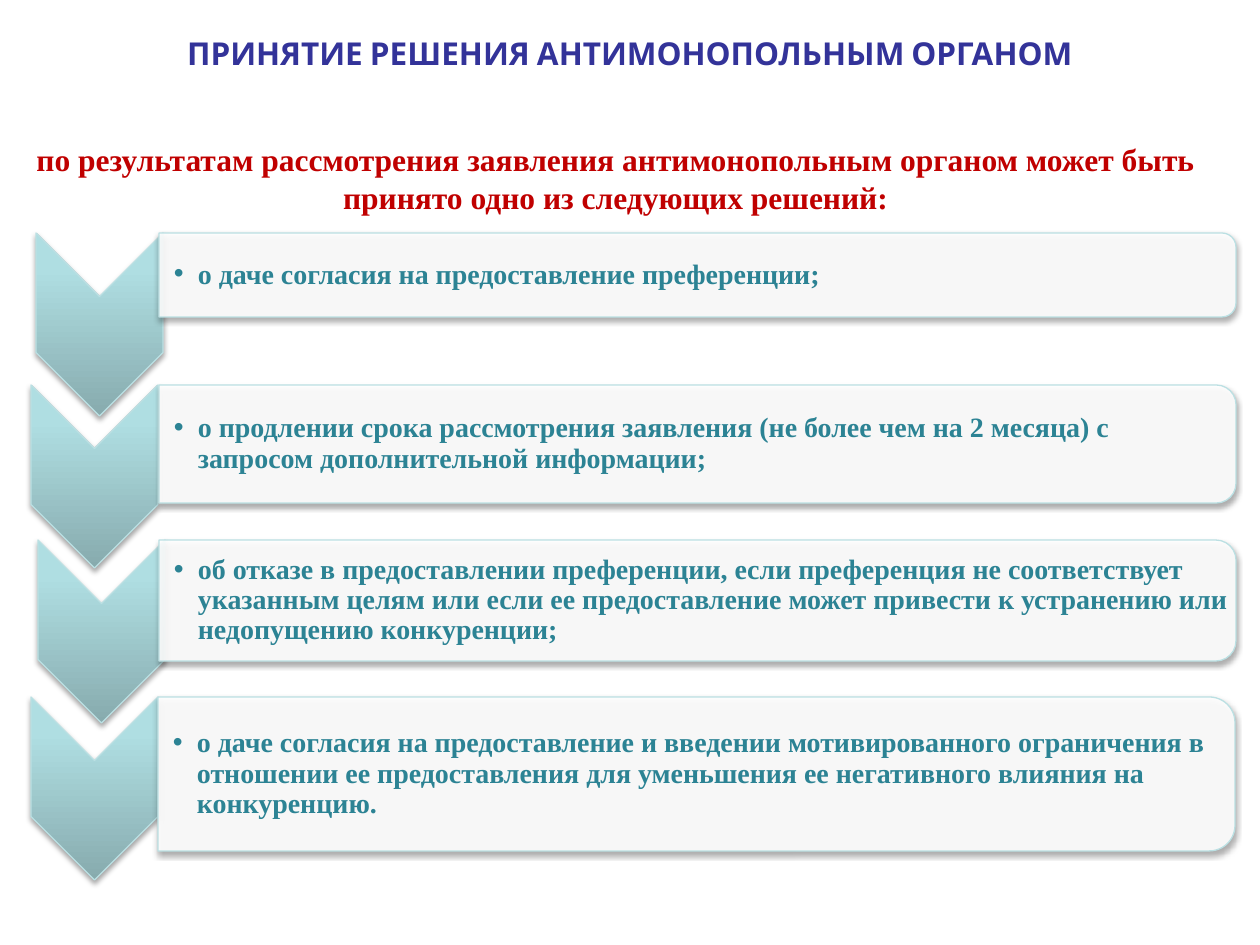
"""Builds a slide listing the decisions an antimonopoly authority may take."""
import pptx
import pptx.util
import pptx.dml.color
import pptx.enum.shapes
import pptx.enum.text
import pptx.oxml
import pptx.oxml.ns

PX = 914400 / 126
NS = 'xmlns:a="http://schemas.openxmlformats.org/drawingml/2006/main"'
SHADOW = (f'<a:outerShdw {NS} blurRad="40000" dist="23000" dir="5400000" rotWithShape="0">'
          '<a:srgbClr val="000000"><a:alpha val="35000"/></a:srgbClr></a:outerShdw>')
GRADIENT = (f'<a:gradFill {NS} rotWithShape="0"><a:gsLst>'
            '<a:gs pos="0"><a:srgbClr val="87ABAE"/></a:gs>'
            '<a:gs pos="80000"><a:srgbClr val="AFDEE2"/></a:gs>'
            '<a:gs pos="100000"><a:srgbClr val="AFE0E4"/></a:gs>'
            '</a:gsLst><a:lin ang="16200000" scaled="0"/></a:gradFill>')
BULLET_FONT = f'<a:buFont {NS} typeface="Arial"/>'
BULLET = f'<a:buChar {NS} char="•"/>'
CHEVRON = pptx.enum.shapes.MSO_SHAPE.CHEVRON
PANEL = pptx.enum.shapes.MSO_SHAPE.ROUND_2_SAME_RECTANGLE
CENTER = pptx.enum.text.PP_ALIGN.CENTER
MIDDLE = pptx.enum.text.MSO_ANCHOR.MIDDLE


def add_turned(kind, left, top, width, height):
    x, y = left + (width - height) / 2, top + (height - width) / 2
    shape = slide.shapes.add_shape(kind, *(int(v * PX) for v in (x, y, height, width)))
    shape.rotation = 90
    shape.line.color.rgb = pptx.dml.color.RGBColor.from_string("BBE0E3")
    shape.line.width = pptx.util.Pt(0.75)
    shape.shadow.inherit = False
    effects = shape._element.spPr.find(pptx.oxml.ns.qn("a:effectLst"))
    effects.append(pptx.oxml.parse_xml(SHADOW))
    return shape


def add_run(paragraph, text, size, font, color):
    run = paragraph.add_run()
    run.text = text
    run.font.size = pptx.util.Pt(size)
    run.font.name = font
    run.font.bold = True
    run.font.color.rgb = pptx.dml.color.RGBColor.from_string(color)


deck = pptx.Presentation()
deck.slide_width, deck.slide_height = int(1260 * PX), int(945 * PX)
slide = deck.slides.add_slide(deck.slide_layouts[5])

heading = slide.shapes.title
heading.left, heading.top, heading.width, heading.height = (
    int(v * PX) for v in (63, 0, 1134, 105))
heading.text_frame.vertical_anchor = MIDDLE
heading.text_frame.paragraphs[0].alignment = CENTER
add_run(heading.text_frame.paragraphs[0], "ПРИНЯТИЕ РЕШЕНИЯ АНТИМОНОПОЛЬНЫМ ОРГАНОМ",
        18, "Cabin", "333399")

decisions = [
    (36, 159, 233, 84, "о даче согласия на предоставление преференции;"),
    (31, 159, 385, 118, "о продлении срока рассмотрения заявления (не более чем на 2 месяца) "
     "с запросом дополнительной информации;"),
    (38, 159, 540, 121, "об отказе в предоставлении преференции, если преференция не "
     "соответствует указанным целям или если ее предоставление может привести к устранению "
     "или недопущению конкуренции;"),
    (31, 158, 697, 154, "о даче согласия на предоставление и введении мотивированного "
     "ограничения в отношении ее предоставления для уменьшения ее негативного влияния на "
     "конкуренцию."),
]
for arrow_left, panel_left, top, height, wording in decisions:
    arrow = add_turned(CHEVRON, arrow_left, top, 127, 183)
    geometry = arrow._element.spPr.find(pptx.oxml.ns.qn("a:prstGeom"))
    geometry.addnext(pptx.oxml.parse_xml(GRADIENT))

    panel = add_turned(PANEL, panel_left, top, 1077, height)
    panel.fill.solid()
    panel.fill.fore_color.rgb = pptx.dml.color.RGBColor.from_string("FFFFFF")
    white = panel._element.spPr.find(pptx.oxml.ns.qn("a:solidFill"))[0]
    white.append(pptx.oxml.parse_xml(f'<a:alpha {NS} val="90000"/>'))

    decision = slide.shapes.add_textbox(*(
        int(v * PX) for v in (panel_left, top + height * 0.05, 1072, height * 0.9)))
    frame = decision.text_frame
    frame.word_wrap = True
    frame.vertical_anchor = MIDDLE
    frame.margin_left = int(15 * PX)
    frame.margin_top = frame.margin_right = frame.margin_bottom = int(1 * PX)
    item = frame.paragraphs[0]
    item.level = 1
    item.line_spacing = 0.9
    item.space_after = pptx.util.Pt(3)
    properties = item._p.get_or_add_pPr()
    properties.set("marL", str(int(24 * PX)))
    properties.set("indent", str(int(-24 * PX)))
    properties.append(pptx.oxml.parse_xml(BULLET_FONT))
    properties.append(pptx.oxml.parse_xml(BULLET))
    add_run(item, wording, 16, "Times New Roman", "2C8394")

intro = slide.shapes.add_textbox(*(int(v * PX) for v in (24, 134, 1203, 89)))
intro.text_frame.word_wrap = False
intro.text_frame.auto_size = pptx.enum.text.MSO_AUTO_SIZE.SHAPE_TO_FIT_TEXT
opening = intro.text_frame.paragraphs[0]
add_run(opening, "по результатам рассмотрения заявления антимонопольным органом может быть",
        18, "Times New Roman", "C00000")
closing = intro.text_frame.add_paragraph()
closing.alignment = CENTER
add_run(closing, "принято одно из следующих решений:", 18, "Times New Roman", "C00000")

deck.save("out.pptx")
